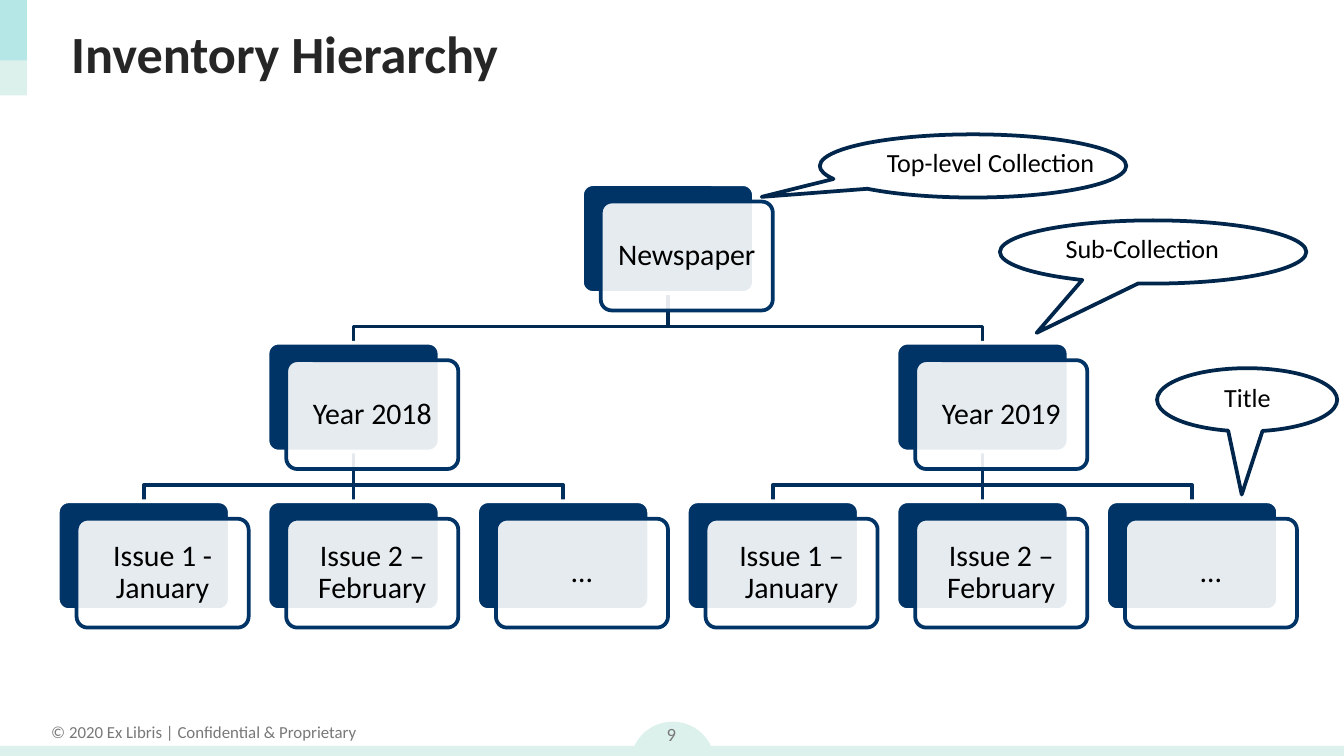
from dataclasses import dataclass

from lxml.etree import SubElement
from pptx import Presentation
from pptx.dml.color import RGBColor
from pptx.enum.shapes import MSO_CONNECTOR as Connector, MSO_SHAPE as Preset
from pptx.enum.text import MSO_ANCHOR as Anchor, MSO_AUTO_SIZE as AutoSize, PP_ALIGN as Align
from pptx.oxml.ns import qn
from pptx.util import Inches, Pt


@dataclass(frozen=True)
class Theme:
    font: str = "Calibri"
    mint: str = "DCF1EC"
    aqua: str = "50CFDA"
    white: str = "FFFFFF"
    ink: str = "000000"
    heading: str = "262626"
    muted: str = "787878"
    navy: str = "003466"
    upper_link: str = "002A52"
    lower_link: str = "002F5D"
    callout: str = "00264B"
    title_size: int = 28
    card_size: int = 16
    callout_size: int = 14
    number_size: int = 10
    footer_size: int = 9
    line: int = 2


@dataclass(frozen=True)
class Node:
    label: str
    column: float
    row: int
    children: tuple = ()

    @property
    def left(self) -> float:
        return 0.43 + 1.56 * self.column

    @property
    def top(self) -> float:
        return 1.37 + 1.18 * self.row

    @property
    def center(self) -> float:
        return self.left + CARD_W / 2

    @property
    def bottom(self) -> float:
        return self.top + CARD_H


@dataclass(frozen=True)
class Callout:
    label: str
    bubble: tuple
    tail: tuple
    label_box: tuple


THEME = Theme()
CARD_W, CARD_H = 1.28, 0.81
PANEL_DX, PANEL_DY = 0.14, 0.13
STEM = 0.25  # from a card's bottom down to the branch line

YEAR_2018 = Node("Year 2018", 1, 1, (
    Node("Issue 1 - January", 0, 2),
    Node("Issue 2 – February", 1, 2),
    Node("…", 2, 2),
))
YEAR_2019 = Node("Year 2019", 4, 1, (
    Node("Issue 1 – January", 3, 2),
    Node("Issue 2 – February", 4, 2),
    Node("…", 5, 2),
))
NEWSPAPER = Node("Newspaper", 2.5, 0, (YEAR_2018, YEAR_2019))

CALLOUTS = (
    Callout("Top-level Collection", (6.1, 1, 2.28, 0.47), (-0.69, 0.49), (6.5, 1.04, 1.76, 0.34)),
    Callout("Sub-Collection", (7.44, 1.64, 2.28, 0.47), (-0.38, 1.28), (7.83, 1.68, 1.36, 0.34)),
    Callout("Title", (8.61, 2.74, 1.34, 0.47), (-0.03, 1.5), (9.01, 2.79, 0.55, 0.34)),
)


def rgb(color: str) -> RGBColor:
    return RGBColor.from_string(color)


def style_line(line, color: str) -> None:
    line.color.rgb = rgb(color)
    line.width = Pt(THEME.line)


def add_preset(slide, preset, box: tuple, fill: str = "", line: str = "", opacity: int = 100):
    shape = slide.shapes.add_shape(preset, *map(Inches, box))
    shape.shadow.inherit = False
    if fill:
        shape.fill.solid()
        shape.fill.fore_color.rgb = rgb(fill)
        if opacity < 100:
            color = shape.fill._xPr.find(qn("a:solidFill"))[0]
            SubElement(color, qn("a:alpha")).set("val", str(opacity * 1000))
    else:
        shape.fill.background()
    if line:
        style_line(shape.line, line)
    else:
        shape.line.fill.background()
    return shape


def write(frame, text: str, size: int, color: str, align=Align.LEFT, bold: bool = False) -> None:
    paragraph = frame.paragraphs[0]
    paragraph.alignment = align
    run = paragraph.add_run()
    run.text = text
    run.font.name = THEME.font
    run.font.size = Pt(size)
    run.font.bold = bold
    run.font.color.rgb = rgb(color)


def add_label(slide, box: tuple, text: str, size: int, color: str, align=Align.LEFT):
    frame = slide.shapes.add_textbox(*map(Inches, box)).text_frame
    frame.word_wrap = False
    frame.auto_size = AutoSize.SHAPE_TO_FIT_TEXT
    write(frame, text, size, color, align)
    return frame


def add_branch(slide, parent: Node, child: Node, color: str) -> None:
    bend = parent.bottom + STEM
    points = ((parent.center, bend), (child.center, bend), (child.center, child.top))
    builder = slide.shapes.build_freeform(
        Inches(parent.center), Inches(parent.bottom), scale=1.0)
    builder.add_line_segments([(Inches(x), Inches(y)) for x, y in points], close=False)
    branch = builder.convert_to_shape()
    branch.shadow.inherit = False
    branch.fill.background()
    style_line(branch.line, color)


def add_straight(slide, parent: Node, child: Node, color: str):
    link = slide.shapes.add_connector(
        Connector.STRAIGHT, Inches(parent.center), Inches(parent.bottom),
        Inches(child.center), Inches(child.top))
    style_line(link.line, color)
    SubElement(link._element.spPr, qn("a:effectLst"))
    return link


def add_card(slide, node: Node):
    back = add_preset(slide, Preset.ROUNDED_RECTANGLE,
                      (node.left, node.top, CARD_W, CARD_H), THEME.navy, THEME.white)
    panel = add_preset(slide, Preset.ROUNDED_RECTANGLE,
                       (node.left + PANEL_DX, node.top + PANEL_DY, CARD_W, CARD_H),
                       THEME.white, THEME.navy, opacity=90)
    for shape in (back, panel):
        shape.adjustments[0] = 0.1
    frame = panel.text_frame
    frame.word_wrap = True
    frame.vertical_anchor = Anchor.MIDDLE
    frame.margin_left = frame.margin_right = Inches(0.09)
    frame.paragraphs[0].line_spacing = 0.9
    write(frame, node.label, THEME.card_size, THEME.ink, Align.CENTER)
    return back


def add_tree(slide, root: Node) -> None:
    nodes = [root]
    for node in nodes:
        nodes.extend(node.children)
    # Links lie behind the cards, so they are joined once the cards exist
    straight = []
    for parent in nodes:
        color = THEME.lower_link if parent.row else THEME.upper_link
        for child in parent.children:
            if child.column == parent.column:
                straight.append((add_straight(slide, parent, child, color), parent, child))
            else:
                add_branch(slide, parent, child, color)
    cards = {node: add_card(slide, node) for node in nodes}
    for link, parent, child in straight:
        link.begin_connect(cards[parent], 2)
        link.end_connect(cards[child], 0)


def add_callout(slide, callout: Callout) -> None:
    bubble = add_preset(slide, Preset.OVAL_CALLOUT, callout.bubble, line=THEME.callout)
    bubble.adjustments[0], bubble.adjustments[1] = callout.tail
    add_label(slide, callout.label_box, callout.label, THEME.callout_size, THEME.ink)


def main() -> None:
    deck = Presentation()
    deck.slide_width = Inches(10)
    deck.slide_height = deck.slide_width * 9 // 16
    slide = deck.slides.add_slide(deck.slide_layouts[5])

    # Page furniture
    add_preset(slide, Preset.OVAL, (4.69, 5.37, 0.63, 0.63), THEME.mint)
    add_label(slide, (0.27, 5.32, 2.49, 0.25), "© 2020 Ex Libris | Confidential & Proprietary",
              THEME.footer_size, THEME.muted, Align.CENTER)
    add_preset(slide, Preset.RECTANGLE, (0, 5.55, 10, 0.11), THEME.mint)
    add_preset(slide, Preset.RECTANGLE, (0, 0, 0.2, 0.71), THEME.mint)
    add_preset(slide, Preset.RECTANGLE, (0, 0, 0.2, 0.45), THEME.aqua, opacity=27)
    number = add_label(slide, (4.7, 5.26, 0.59, 0.4), "9",
                       THEME.number_size, THEME.muted, Align.CENTER)
    number.auto_size = AutoSize.NONE
    number.word_wrap = True
    number.vertical_anchor = Anchor.MIDDLE

    # Title
    title = slide.shapes.title
    title.left, title.top, title.width, title.height = map(Inches, (0.43, 0.08, 9.21, 0.63))
    title.text_frame.vertical_anchor = Anchor.MIDDLE
    write(title.text_frame, "Inventory Hierarchy", THEME.title_size, THEME.heading, bold=True)

    # Hierarchy and its level callouts
    add_tree(slide, NEWSPAPER)
    for callout in CALLOUTS:
        add_callout(slide, callout)

    deck.save("out.pptx")


if __name__ == "__main__":
    main()
